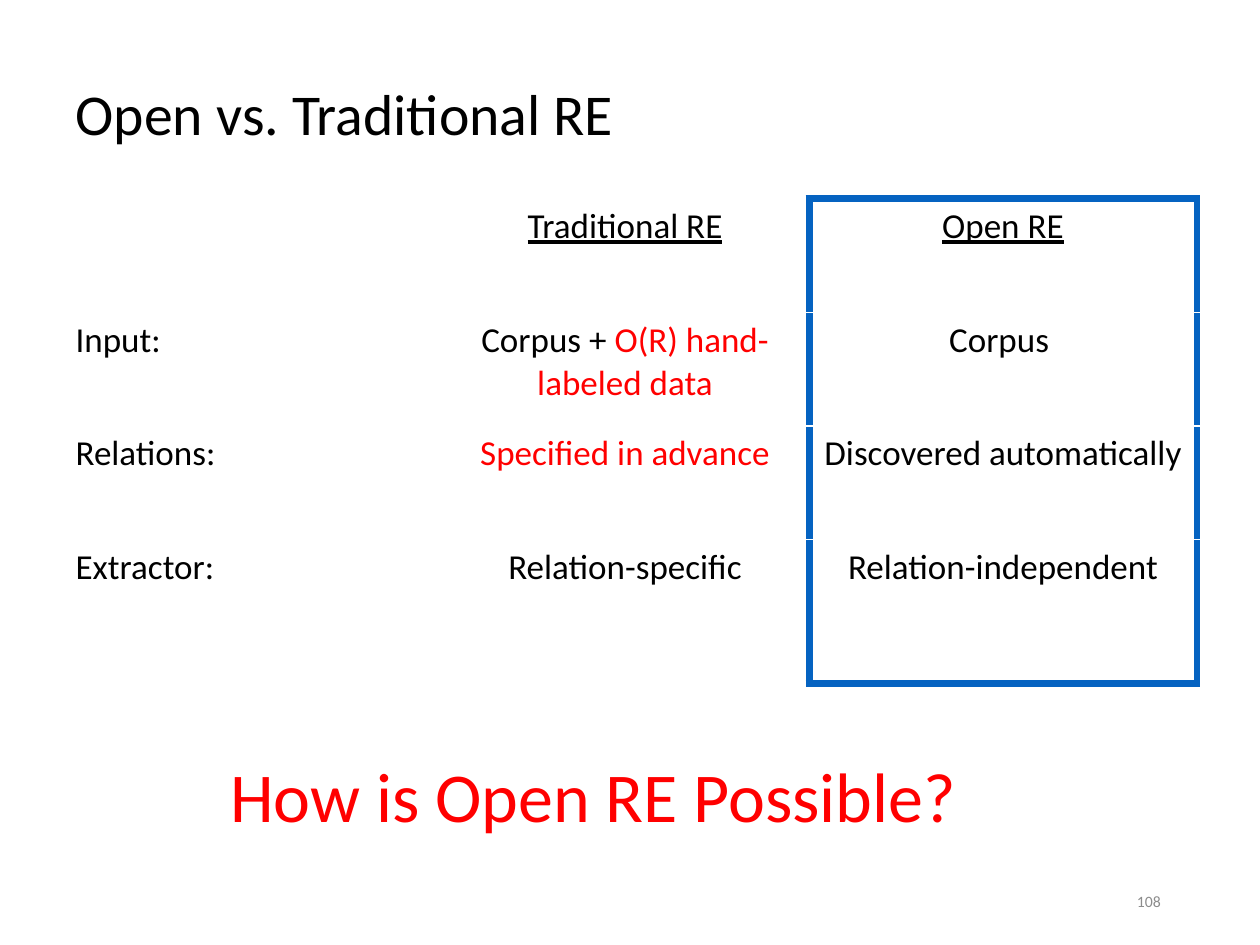
from dataclasses import dataclass

import lxml.etree
import pptx
import pptx.dml.color
import pptx.enum.text
import pptx.oxml.ns
import pptx.util

Cm = pptx.util.Cm
Pt = pptx.util.Pt
RGB = pptx.dml.color.RGBColor
ALIGN = pptx.enum.text.PP_ALIGN
ANCHOR = pptx.enum.text.MSO_ANCHOR
qn = pptx.oxml.ns.qn


@dataclass(frozen=True)
class Theme:
    font: str = "Calibri"
    text: str = "000000"
    accent: str = "FF0000"
    frame: str = "0563C1"
    muted: str = "8C8C8C"
    title_size: int = 33
    table_size: int = 20
    question_size: int = 40
    number_size: int = 9
    frame_width: float = 4.5


THEME = Theme()
COL_WIDTHS = (7.62, 7.42, 7.82)
ROW_HEIGHTS = (2.29, 2.29, 2.29, 2.9)
ROWS = (
    ((), (("Traditional RE", THEME.text),), (("Open RE", THEME.text),)),
    (
        (("Input:", THEME.text),),
        (("Corpus + ", THEME.text), ("O(R) hand-labeled data", THEME.accent)),
        (("Corpus ", THEME.text),),
    ),
    (
        (("Relations:", THEME.text),),
        (("Specified in advance", THEME.accent),),
        (("Discovered automatically", THEME.text),),
    ),
    (
        (("Extractor:", THEME.text),),
        (("Relation-specific", THEME.text),),
        (("Relation-independent", THEME.text),),
    ),
)


def add_run(p, text, size, color, underline=None):
    r = p.add_run()
    r.text = text
    r.font.name = THEME.font
    r.font.size = Pt(size)
    r.font.color.rgb = RGB.from_string(color)
    r.font.underline = underline


def set_borders(cell, sides):
    tc_pr = cell._tc.get_or_add_tcPr()
    for i, side in enumerate(s for s in "LRTB" if s in sides):
        ln = lxml.etree.Element(qn("a:ln" + side), w=str(Pt(THEME.frame_width)))
        fill = lxml.etree.SubElement(ln, qn("a:solidFill"))
        lxml.etree.SubElement(fill, qn("a:srgbClr"), val=THEME.frame)
        tc_pr.insert(i, ln)


def frame_sides(row, col):
    if col == 1:
        return "R"
    if col == 2:
        return "LR" + {0: "T", len(ROWS) - 1: "B"}.get(row, "")
    return ""


def add_title(s, text):
    sp = s.shapes.title
    sp.left, sp.top, sp.width, sp.height = Cm(1.27), Cm(0.76), Cm(22.86), Cm(3.18)
    tf = sp.text_frame
    tf.vertical_anchor = ANCHOR.MIDDLE
    p = tf.paragraphs[0]
    p.alignment = ALIGN.LEFT
    p.line_spacing = 0.9
    add_run(p, text, THEME.title_size, THEME.text)


def add_comparison(s):
    table = s.shapes.add_table(
        len(ROWS), len(COL_WIDTHS), Cm(1.27), Cm(4.01),
        Cm(sum(COL_WIDTHS)), Cm(sum(ROW_HEIGHTS)),
    ).table
    table.first_row = table.horz_banding = False
    for column, width in zip(table.columns, COL_WIDTHS):
        column.width = Cm(width)
    for i, (row, height) in enumerate(zip(ROWS, ROW_HEIGHTS)):
        table.rows[i].height = Cm(height)
        for j, runs in enumerate(row):
            cell = table.cell(i, j)
            cell.fill.background()
            set_borders(cell, frame_sides(i, j))
            p = cell.text_frame.paragraphs[0]
            p.alignment = ALIGN.CENTER if j else ALIGN.LEFT
            for text, color in runs:
                add_run(p, text, THEME.table_size, color, i == 0)


def add_text(s, box, text, size, color, align, anchor):
    tf = s.shapes.add_textbox(*map(Cm, box)).text_frame
    tf.word_wrap = True
    tf.vertical_anchor = anchor
    p = tf.paragraphs[0]
    p.alignment = align
    add_run(p, text, size, color)


def main():
    prs = pptx.Presentation()
    prs.slide_width, prs.slide_height = Cm(25.4), Cm(19.05)
    s = prs.slides.add_slide(prs.slide_layouts[5])
    add_title(s, "Open vs. Traditional RE")
    add_comparison(s)
    add_text(s, (17.93, 17.65, 5.72, 1.02), "108",
             THEME.number_size, THEME.muted, ALIGN.RIGHT, ANCHOR.MIDDLE)
    add_text(s, (1.9, 15.04, 20.12, 1.96), "How is Open RE Possible?",
             THEME.question_size, THEME.accent, ALIGN.CENTER, ANCHOR.TOP)
    prs.save("out.pptx")


if __name__ == "__main__":
    main()
